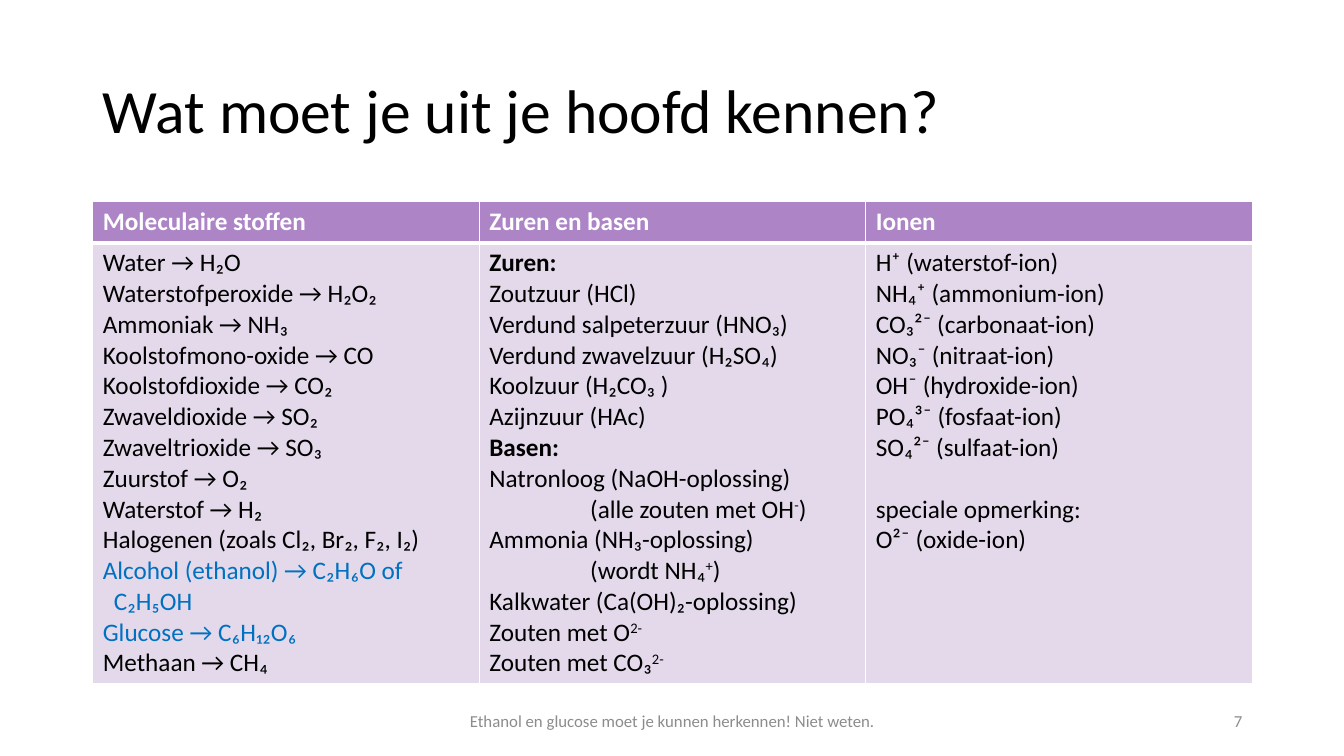
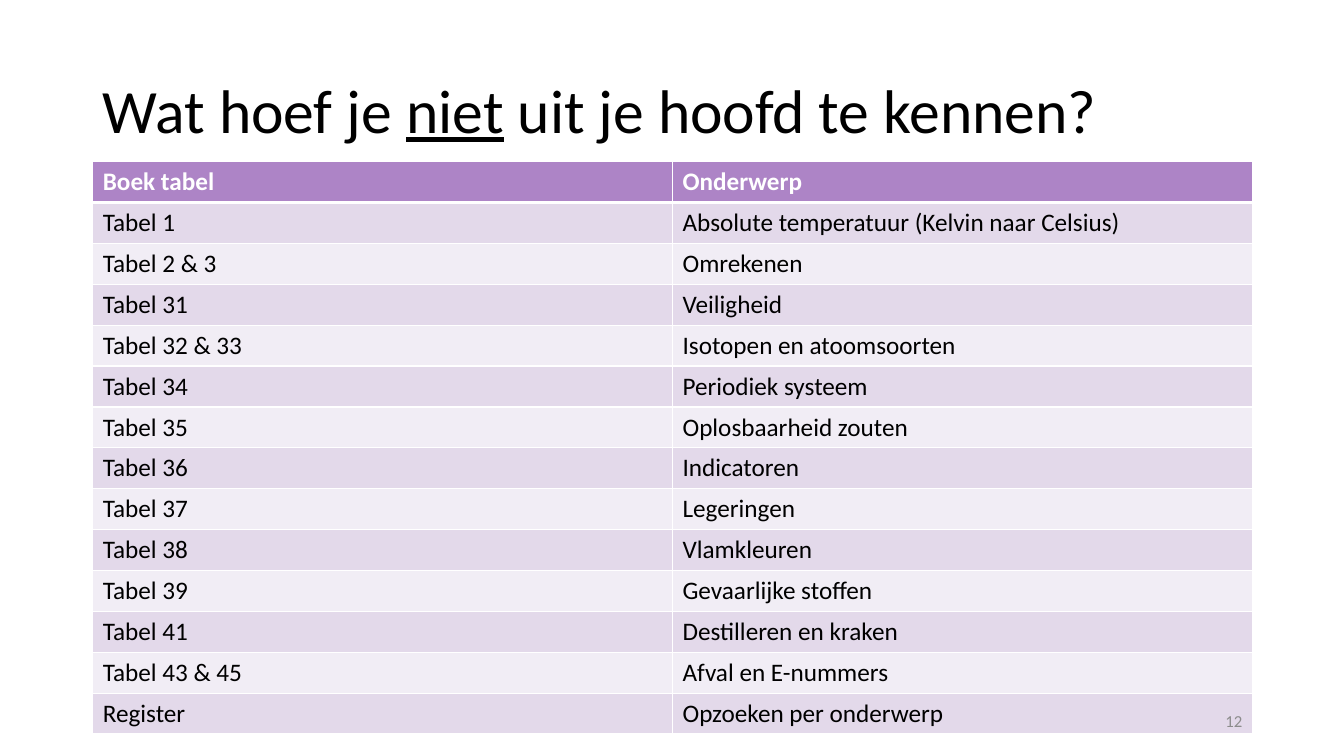
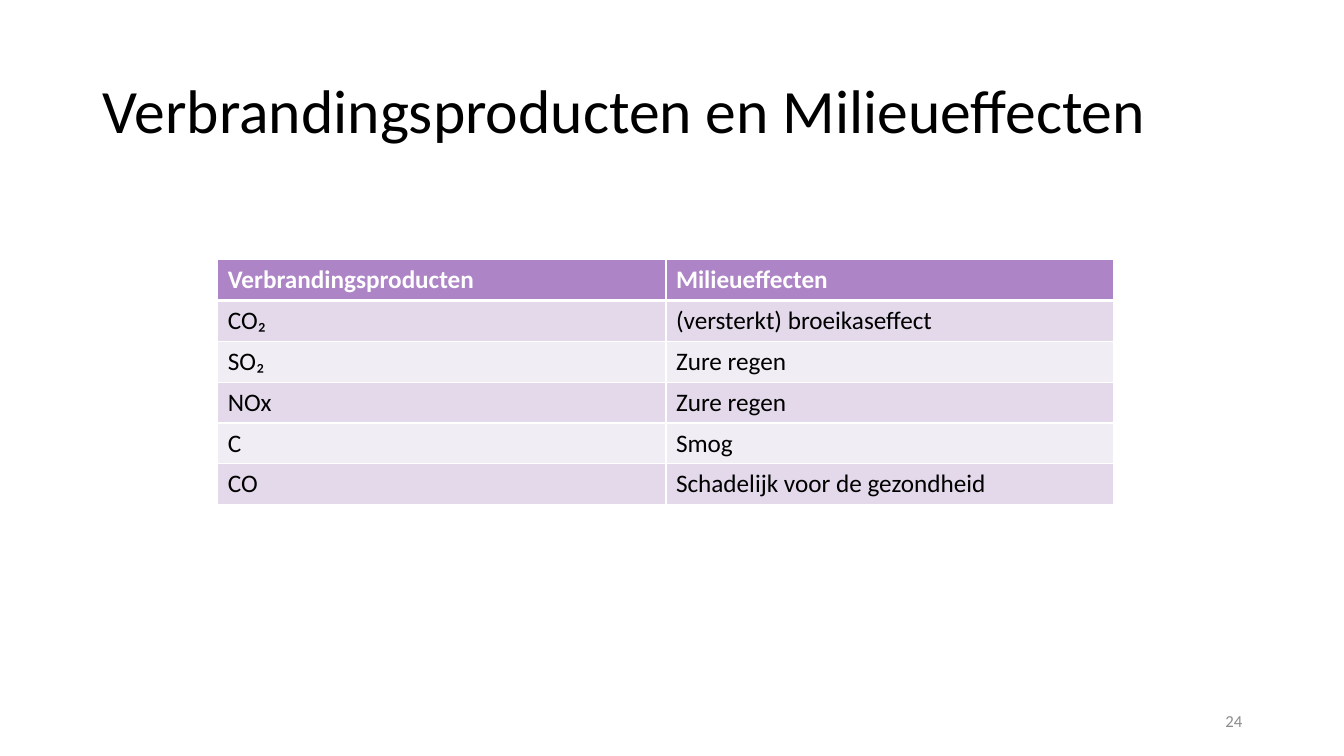
from dataclasses import dataclass

from lxml.etree import SubElement
from pptx import Presentation
from pptx.dml.color import RGBColor
from pptx.enum.text import MSO_ANCHOR, PP_ALIGN
from pptx.oxml.ns import qn
from pptx.util import Inches, Pt

FONT = "Calibri"
COLORS = {
    "text": "000000",
    "white": "FFFFFF",
    "header": "AD84C6",
    "band_dark": "E3D9EA",
    "band_light": "F1EDF5",
    "recognise": "0070C0",
    "footer": "8C8C8C",
}
MARGIN = Inches(0.92)
CONTENT_WIDTH = Inches(11.5)
HEADER_HEIGHT = Inches(0.41)
FOOTER_TOP = Inches(6.95)
FOOTER_HEIGHT = Inches(0.4)
SUPERSCRIPT = "30000"


@dataclass
class Span:
    text: str
    underline: bool = False
    raised: bool = False


@dataclass
class Line:
    """One paragraph; hanging indents only the lines after the first."""
    spans: tuple
    bold: bool = False
    color: str = "text"
    indent: float = 0
    hanging: float = 0
    before: float = 0


def line(*parts, **style):
    """Make a Line from plain strings and Spans."""
    spans = tuple(Span(p) if isinstance(p, str) else p for p in parts)
    return Line(spans, **style)


def sup(text):
    return Span(text, raised=True)


def write_line(paragraph, content, size):
    left = content.indent + content.hanging
    if left:
        properties = paragraph._p.get_or_add_pPr()
        properties.set("marL", str(Inches(left)))
        properties.set("indent", str(-Inches(content.hanging)))
    if content.before:
        paragraph.space_before = Pt(content.before)
    for span in content.spans:
        run = paragraph.add_run()
        run.text = span.text
        run.font.name = FONT
        run.font.size = Pt(size)
        run.font.bold = content.bold
        run.font.color.rgb = RGBColor.from_string(COLORS[content.color])
        if span.underline:
            run.font.underline = True
        if span.raised:
            run._r.get_or_add_rPr().set("baseline", SUPERSCRIPT)


def add_titled_slide(prs, title):
    slide = prs.slides.add_slide(prs.slide_layouts[5])
    heading = slide.shapes.title
    heading.left, heading.top = MARGIN, Inches(0.4)
    heading.width, heading.height = CONTENT_WIDTH, Inches(1.45)
    frame = heading.text_frame
    frame.word_wrap = True
    frame.vertical_anchor = MSO_ANCHOR.MIDDLE
    paragraph = frame.paragraphs[0]
    paragraph.alignment = PP_ALIGN.LEFT
    paragraph.line_spacing = 0.9
    write_line(paragraph, title, 44)
    return slide


def add_footer(slide, text, left, width, alignment):
    box = slide.shapes.add_textbox(left, FOOTER_TOP, width, FOOTER_HEIGHT)
    frame = box.text_frame
    frame.word_wrap = True
    frame.vertical_anchor = MSO_ANCHOR.MIDDLE
    frame.paragraphs[0].alignment = alignment
    write_line(frame.paragraphs[0], line(text, color="footer"), 12)


def add_page_number(slide, number):
    add_footer(slide, str(number), Inches(9.42), Inches(3), PP_ALIGN.RIGHT)


def set_borders(cell, top, bottom):
    properties = cell._tc.get_or_add_tcPr()
    for side, points in (("L", 1), ("R", 1), ("T", top), ("B", bottom)):
        border = SubElement(properties, qn(f"a:ln{side}"), w=str(Pt(points)))
        fill = SubElement(border, qn("a:solidFill"))
        SubElement(fill, qn("a:srgbClr"), val=COLORS["white"])


def fill_cell(cell, lines, color):
    cell.fill.solid()
    cell.fill.fore_color.rgb = RGBColor.from_string(COLORS[color])
    frame = cell.text_frame
    for index, content in enumerate(lines):
        paragraph = frame.add_paragraph() if index else frame.paragraphs[0]
        write_line(paragraph, content, 18)


def add_banded_table(slide, left, top, width, height, headers, body):
    """Add a table whose body cells are strings or lists of Lines."""
    frame = slide.shapes.add_table(
        len(body) + 1, len(headers), left, top, width, height)
    table = frame.table
    for column in table.columns:
        column.width = width // len(headers)
    for index, row in enumerate(table.rows):
        row.height = (height - HEADER_HEIGHT) // len(body) if index else HEADER_HEIGHT
    for column, header in enumerate(headers):
        cell = table.cell(0, column)
        set_borders(cell, 1, 3)
        fill_cell(cell, [line(header, bold=True, color="white")], "header")
    for row, contents in enumerate(body, start=1):
        band = "band_dark" if row % 2 else "band_light"
        for column, content in enumerate(contents):
            cell = table.cell(row, column)
            set_borders(cell, 3 if row == 1 else 1, 1)
            lines = [line(content)] if isinstance(content, str) else content
            fill_cell(cell, lines, band)


MOLECULES = [
    line("Water → H₂O"),
    line("Waterstofperoxide → H₂O₂"),
    line("Ammoniak → NH₃"),
    line("Koolstofmono-oxide → CO"),
    line("Koolstofdioxide → CO₂"),
    line("Zwaveldioxide → SO₂"),
    line("Zwaveltrioxide → SO₃"),
    line("Zuurstof → O₂"),
    line("Waterstof → H₂"),
    line("Halogenen (zoals Cl₂, Br₂, F₂, I₂)"),
    line("Alcohol (ethanol) → C₂H₆O of C₂H₅OH", color="recognise", hanging=0.11),
    line("Glucose → C₆H₁₂O₆", color="recognise"),
    line("Methaan → CH₄"),
]
ACIDS_AND_BASES = [
    line("Zuren:", bold=True),
    line("Zoutzuur (HCl)"),
    line("Verdund salpeterzuur (HNO₃)"),
    line("Verdund zwavelzuur (H₂SO₄)"),
    line("Koolzuur (H₂CO₃ )"),
    line("Azijnzuur (HAc)"),
    line("Basen:", bold=True),
    line("Natronloog (NaOH-oplossing)"),
    line("(alle zouten met OH", sup("-"), ")", indent=1),
    line("Ammonia (NH₃-oplossing)"),
    line("(wordt NH₄", sup("+"), ")", indent=1),
    line("Kalkwater (Ca(OH)₂-oplossing)"),
    line("Zouten met O", sup("2-")),
    line("Zouten met CO₃", sup("2-")),
]
IONS = [
    line("H⁺ (waterstof-ion)"),
    line("NH₄⁺ (ammonium-ion)"),
    line("CO₃²⁻ (carbonaat-ion)"),
    line("NO₃⁻ (nitraat-ion)"),
    line("OH⁻ (hydroxide-ion)"),
    line("PO₄³⁻ (fosfaat-ion)"),
    line("SO₄²⁻ (sulfaat-ion)"),
    line("speciale opmerking:", before=22),
    line("O²⁻ (oxide-ion)"),
]
REFERENCE_TABLES = [
    ("Tabel 1", "Absolute temperatuur (Kelvin naar Celsius)"),
    ("Tabel 2 & 3", "Omrekenen"),
    ("Tabel 31", "Veiligheid"),
    ("Tabel 32 & 33", "Isotopen en atoomsoorten"),
    ("Tabel 34", "Periodiek systeem"),
    ("Tabel 35", "Oplosbaarheid zouten"),
    ("Tabel 36", "Indicatoren"),
    ("Tabel 37", "Legeringen"),
    ("Tabel 38", "Vlamkleuren"),
    ("Tabel 39", "Gevaarlijke stoffen"),
    ("Tabel 41", "Destilleren en kraken"),
    ("Tabel 43 & 45", "Afval en E-nummers"),
    ("Register", "Opzoeken per onderwerp"),
]
COMBUSTION_EFFECTS = [
    ("CO₂", "(versterkt) broeikaseffect"),
    ("SO₂", "Zure regen"),
    ("NOx", "Zure regen"),
    ("C", "Smog"),
    ("CO", "Schadelijk voor de gezondheid"),
]


def main():
    prs = Presentation()
    prs.slide_width, prs.slide_height = Inches(13.33), Inches(7.5)

    known = add_titled_slide(prs, line("Wat moet je uit je hoofd kennen?"))
    add_banded_table(
        known, MARGIN, Inches(2), CONTENT_WIDTH, Inches(4.77),
        ("Moleculaire stoffen", "Zuren en basen", "Ionen"),
        [(MOLECULES, ACIDS_AND_BASES, IONS)])
    add_footer(known, "Ethanol en glucose moet je kunnen herkennen! Niet weten.",
               Inches(4.42), Inches(4.5), PP_ALIGN.CENTER)
    add_page_number(known, 7)

    lookup = add_titled_slide(prs, line(
        "Wat hoef je ", Span("niet", underline=True), " uit je hoofd te kennen?"))
    add_banded_table(
        lookup, MARGIN, Inches(1.6), CONTENT_WIDTH, Inches(5.68),
        ("Boek tabel", "Onderwerp"), REFERENCE_TABLES)
    add_page_number(lookup, 12)

    combustion = add_titled_slide(
        prs, line("Verbrandingsproducten en Milieueffecten"))
    add_banded_table(
        combustion, Inches(2.16), Inches(2.57), Inches(8.89), Inches(2.43),
        ("Verbrandingsproducten", "Milieueffecten"), COMBUSTION_EFFECTS)
    add_page_number(combustion, 24)

    prs.save("out.pptx")


if __name__ == "__main__":
    main()
